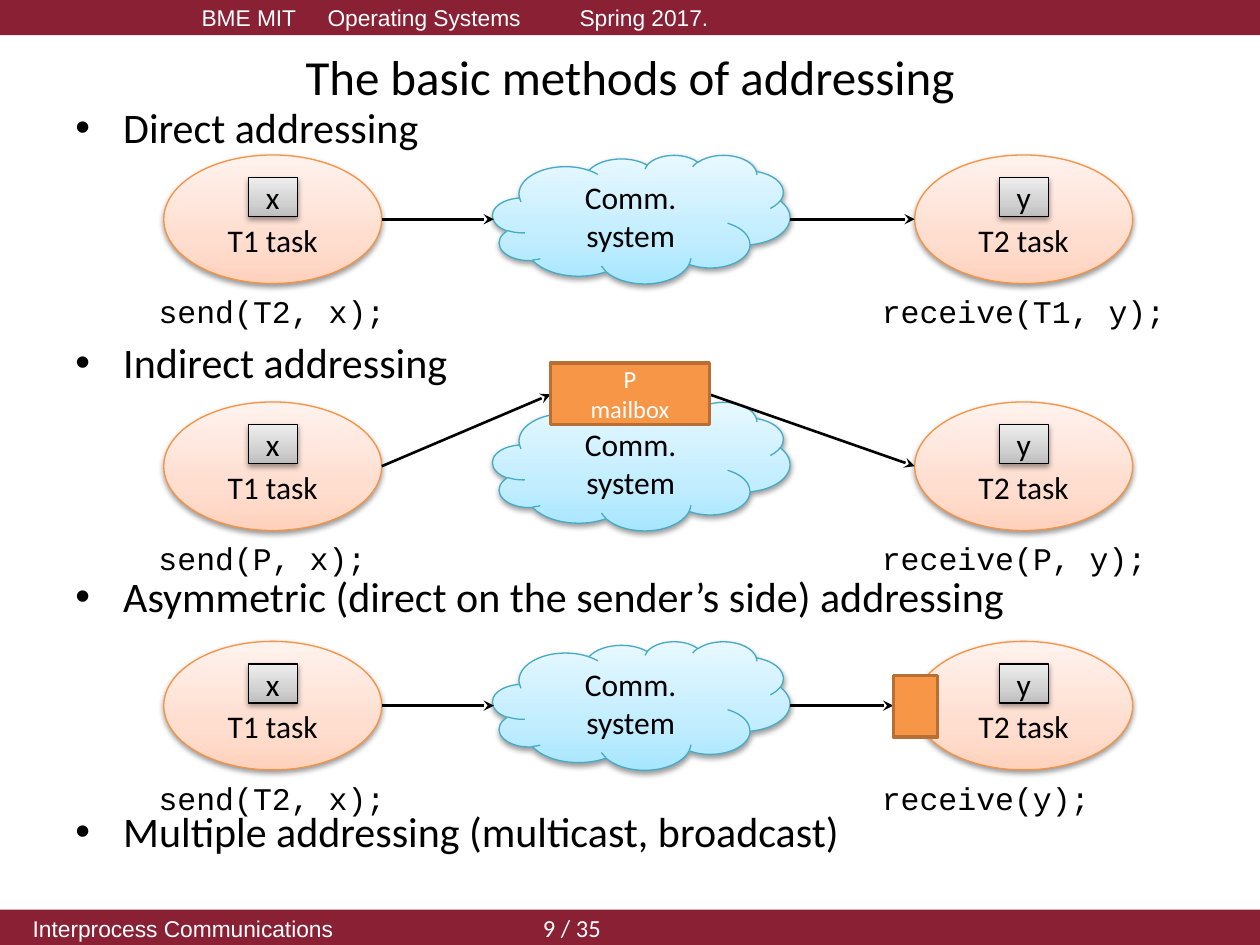
from lxml import etree
from pptx import Presentation
from pptx.dml.color import RGBColor
from pptx.enum.shapes import MSO_CONNECTOR, MSO_SHAPE
from pptx.enum.text import MSO_ANCHOR, PP_ALIGN
from pptx.oxml import parse_xml
from pptx.oxml.ns import nsdecls, qn
from pptx.util import Inches, Pt

RECT, OVAL, CLOUD = MSO_SHAPE.RECTANGLE, MSO_SHAPE.OVAL, MSO_SHAPE.CLOUD
STRAIGHT = MSO_CONNECTOR.STRAIGHT
MIDDLE, BOTTOM, TOP = MSO_ANCHOR.MIDDLE, MSO_ANCHOR.BOTTOM, MSO_ANCHOR.TOP
LEFT, CENTER = PP_ALIGN.LEFT, PP_ALIGN.CENTER

BLACK = RGBColor(0x00, 0x00, 0x00)
WHITE = RGBColor(0xFF, 0xFF, 0xFF)
WINE = RGBColor(0x89, 0x20, 0x34)
ORANGE = RGBColor(0xF7, 0x96, 0x46)
BROWN = RGBColor(0xB7, 0x6F, 0x34)
RUST = RGBColor(0xF6, 0x92, 0x40)
TEAL = RGBColor(0x46, 0xAA, 0xC5)
# Gradient stops at 0, 35 and 100 %
PEACH = [RGBColor(0xFF, 0xD2, 0xBD), RGBColor(0xFF, 0xDE, 0xD0), RGBColor(0xFF, 0xF2, 0xED)]
GREY = [RGBColor(0xBD, 0xBD, 0xBD), RGBColor(0xD1, 0xD1, 0xD1), RGBColor(0xEE, 0xEE, 0xEE)]
SKY = [RGBColor(0xA7, 0xE6, 0xFF), RGBColor(0xC1, 0xED, 0xFF), RGBColor(0xE7, 0xF8, 0xFF)]

# Top of the task ellipse, send call, receive call
ROWS = [
    (1.23, "send(T2, x);", "receive(T1, y);"),
    (3.19, "send(P, x);", "receive(P, y);"),
    (5.09, "send(T2, x);", "receive(y);"),
]
ARROWS = [
    (3.03, 1.74, 3.92, 1.74), (6.27, 1.74, 7.26, 1.74),
    (3.03, 3.7, 4.37, 3.13), (5.63, 3.13, 7.26, 3.7),
    (3.03, 5.6, 3.92, 5.6), (6.27, 5.6, 7.09, 5.6),
]
POINTS = [
    "Direct addressing",
    "Indirect addressing",
    "Asymmetric (direct on the sender’s side) addressing",
    "Multiple addressing (multicast, broadcast)",
]


def style(para, size, color=BLACK, face="Calibri", align=LEFT):
    para.alignment = align
    para.font.size = Pt(size)
    para.font.name = face
    para.font.color.rgb = color


def write(shape, lines, size, color=BLACK, face="Calibri",
          align=CENTER, anchor=MIDDLE, wrap=True):
    frame = shape.text_frame
    frame.word_wrap = wrap
    frame.vertical_anchor = anchor
    frame.text = lines
    for para in frame.paragraphs:
        style(para, size, color, face, align)


def add_text(slide, box, text, size, **look):
    shape = slide.shapes.add_textbox(*map(Inches, box))
    write(shape, text, size, **look)


def add_flat(slide, box, fill, edge=None):
    shape = slide.shapes.add_shape(RECT, *map(Inches, box))
    shape.shadow.inherit = False
    shape.fill.solid()
    shape.fill.fore_color.rgb = fill
    if edge is None:
        shape.line.fill.background()
    else:
        shape.line.color.rgb = edge
        shape.line.width = Pt(2)
    return shape


def add_glossy(slide, kind, box, stops, edge, text, anchor=MIDDLE):
    """Shape with a vertical gradient and a soft shadow below."""
    shape = slide.shapes.add_shape(kind, *map(Inches, box))
    props = shape._element.spPr
    marks = "".join(
        f'<a:gs pos="{pos}"><a:srgbClr val="{color}"/></a:gs>'
        for pos, color in zip((0, 35000, 100000), stops))
    props.append(parse_xml(
        f'<a:gradFill {nsdecls("a")} rotWithShape="1"><a:gsLst>{marks}</a:gsLst>'
        '<a:lin ang="16200000" scaled="0"/></a:gradFill>'))
    shape.line.color.rgb = edge
    shape.line.width = Pt(0.75)
    shape.shadow.inherit = False
    props.find(qn("a:effectLst")).append(parse_xml(
        f'<a:outerShdw {nsdecls("a")} blurRad="40000" dist="20000" dir="5400000" '
        'rotWithShape="0"><a:srgbClr val="000000"><a:alpha val="38000"/>'
        '</a:srgbClr></a:outerShdw>'))
    write(shape, text, 18, anchor=anchor)


def add_arrow(slide, *ends):
    line = slide.shapes.add_connector(STRAIGHT, *map(Inches, ends))
    line.line.color.rgb = BLACK
    line.line.width = Pt(1.5)
    line.line._get_or_add_ln().append(
        parse_xml(f'<a:tailEnd {nsdecls("a")} type="stealth"/>'))
    etree.SubElement(line._element.spPr, qn("a:effectLst"))


def add_bar(slide, top, inset, tabs, parts):
    """Full-width band; parts are (text, size, font) runs."""
    bar = add_flat(slide, (0, top, 10, 0.28), WINE)
    frame = bar.text_frame
    frame.word_wrap = True
    frame.vertical_anchor = MIDDLE
    frame.margin_left = Inches(inset)
    para = frame.paragraphs[0]
    para.alignment = LEFT
    stops = etree.SubElement(para._p.get_or_add_pPr(), qn("a:tabLst"))
    for pos in tabs:
        etree.SubElement(stops, qn("a:tab"), pos=str(Inches(pos)), algn="l")
    for text, size, face in parts:
        run = para.add_run()
        run.text = text
        run.font.size = Pt(size)
        run.font.name = face
        run.font.color.rgb = WHITE


def add_points(slide):
    box = slide.shapes.add_textbox(*map(Inches, (0.5, 0.76, 9, 6.38)))
    frame = box.text_frame
    frame.word_wrap = True
    frame.text = "\n".join(POINTS)
    for i, para in enumerate(frame.paragraphs):
        props = para._p.get_or_add_pPr()
        props.set("marL", str(Inches(0.38)))
        props.set("indent", str(Inches(-0.38)))
        etree.SubElement(props, qn("a:buFont"), typeface="Arial")
        etree.SubElement(props, qn("a:buChar"), char="•")
        style(para, 24)
        para.space_before = Pt(105.2 if i else 0)


def add_task(slide, left, top, name, item):
    add_glossy(slide, OVAL, (left, top, 1.73, 1.02), PEACH, RUST, name, BOTTOM)
    add_glossy(slide, RECT, (left + 0.67, top + 0.18, 0.39, 0.31), GREY, BLACK, item)


def add_call(slide, left, top, code):
    add_text(slide, (left, top, 0.15 * len(code) + 0.21, 0.4), code, 18,
             face="Courier New", align=LEFT, anchor=TOP, wrap=False)


def add_row(slide, top, send, receive):
    add_task(slide, 1.3, top, "T1 task", "x")
    add_glossy(slide, CLOUD, (3.91, top, 2.36, 1.02), SKY, TEAL, "Comm. system")
    add_task(slide, 7.26, top, "T2 task", "y")
    add_call(slide, 1.16, top + 1.04, send)
    add_call(slide, 6.9, top + 1.04, receive)


def main():
    deck = Presentation()
    deck.slide_width, deck.slide_height = Inches(10), Inches(7.5)
    slide = deck.slides.add_slide(deck.slide_layouts[6])

    # Header and footer bands
    add_bar(slide, 0, 1.6, (1, 3),
            [("BME MIT\tOperating Systems\tSpring 2017.", 13, "Arial")])
    add_bar(slide, 7.22, 0.26, (4.05,),
            [("Interprocess Communications\t", 13, "Arial"), ("9 / 35", 14, "Calibri")])

    # Title and bullets
    add_text(slide, (0.5, 0.3, 9, 0.61), "The basic methods of addressing", 28)
    add_points(slide)

    # Three addressing diagrams
    for row in ROWS:
        add_row(slide, *row)
    for ends in ARROWS:
        add_arrow(slide, *ends)

    # Mailboxes
    box = add_flat(slide, (4.37, 2.88, 1.26, 0.49), ORANGE, BROWN)
    write(box, "P\nmailbox", 14, WHITE)
    add_flat(slide, (7.09, 5.36, 0.35, 0.49), ORANGE, BROWN)

    deck.save("out.pptx")


if __name__ == "__main__":
    main()
